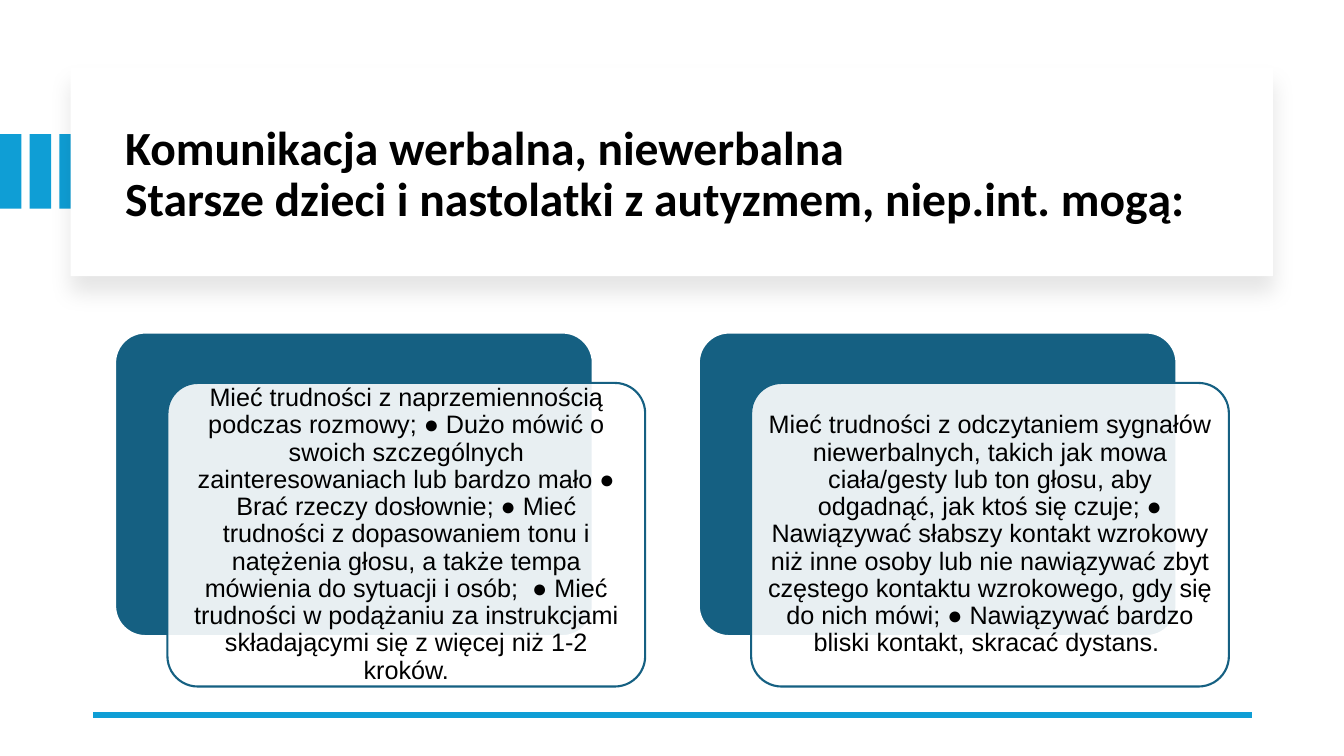
from dataclasses import dataclass

from lxml import etree
from pptx import Presentation
from pptx import util as u
from pptx.dml.color import RGBColor
from pptx.enum import shapes, text
from pptx.oxml import ns

COLORS = {
    "accent": "0F9ED5",
    "panel": "156082",
    "paper": "FFFFFF",
    "ink": "000000",
}
TITLE_LINES = (
    "Komunikacja werbalna, niewerbalna",
    "Starsze dzieci i nastolatki z autyzmem, niep.int. mogą:",
)
PANEL_TOP, PANEL_W, PANEL_H = 8.38, 12.04, 7.65
FRONT_DX, FRONT_DY = 1.32, 1.27
TEXT_MARGIN = 0.23


@dataclass
class Box:
    """Position and size in centimetres."""
    left: float
    top: float
    width: float
    height: float

    def emu(self) -> tuple:
        return tuple(u.Cm(v) for v in (self.left, self.top, self.width, self.height))

    def shifted(self, dx: float, dy: float) -> "Box":
        return Box(self.left + dx, self.top + dy, self.width, self.height)

    def inset(self, d: float) -> "Box":
        return Box(self.left + d, self.top + d, self.width - 2 * d, self.height - 2 * d)


@dataclass
class Panel:
    left: float
    words: str


PANELS = (
    Panel(2.9, "Mieć trudności z naprzemiennością podczas rozmowy; ● Dużo mówić o "
               "swoich szczególnych zainteresowaniach lub bardzo mało ● Brać rzeczy "
               "dosłownie; ● Mieć trudności z dopasowaniem tonu i natężenia głosu, a "
               "także tempa mówienia do sytuacji i osób;  ● Mieć trudności w podążaniu "
               "za instrukcjami składającymi się z więcej niż 1-2 kroków."),
    Panel(17.61, "Mieć trudności z odczytaniem sygnałów niewerbalnych, takich jak mowa "
                 "ciała/gesty lub ton głosu, aby odgadnąć, jak ktoś się czuje; ● "
                 "Nawiązywać słabszy kontakt wzrokowy niż inne osoby lub nie nawiązywać "
                 "zbyt częstego kontaktu wzrokowego, gdy się do nich mówi; ● Nawiązywać "
                 "bardzo bliski kontakt, skracać dystans. "),
)


def rgb(name: str) -> RGBColor:
    return RGBColor.from_string(COLORS[name])


def add_block(s, box: Box, fill: str, line: str = "", rounded: bool = False):
    kind = shapes.MSO_SHAPE.ROUNDED_RECTANGLE if rounded else shapes.MSO_SHAPE.RECTANGLE
    sp = s.shapes.add_shape(kind, *box.emu())
    sp.shadow.inherit = False
    sp.fill.solid()
    sp.fill.fore_color.rgb = rgb(fill)
    if rounded:
        sp.adjustments[0] = 0.1
    if line:
        sp.line.color.rgb = rgb(line)
        sp.line.width = u.Pt(1.5)
    else:
        sp.line.fill.background()
    return sp


def set_alpha(color, percent: int) -> None:
    alpha = etree.SubElement(color, ns.qn("a:alpha"))
    alpha.set("val", str(percent * 1000))


def add_drop_shadow(sp) -> None:
    effects = sp.element.spPr.find(ns.qn("a:effectLst"))
    shadow = etree.SubElement(
        effects, ns.qn("a:outerShdw"), blurRad=str(u.Pt(15)), dist=str(u.Pt(11)),
        dir="5400000", algn="t", rotWithShape="0")
    color = etree.SubElement(shadow, ns.qn("a:srgbClr"), val=COLORS["ink"])
    set_alpha(color, 10)


def add_run(p, words: str, font: str, size: float, bold: bool = False) -> None:
    r = p.add_run()
    r.text = words
    r.font.name = font
    r.font.size = u.Pt(size)
    r.font.bold = bold
    r.font.color.rgb = rgb("ink")


def prepare_frame(tf, align):
    """Wrap and centre the frame vertically; return its first paragraph."""
    tf.word_wrap = True
    tf.auto_size = text.MSO_AUTO_SIZE.NONE
    tf.vertical_anchor = text.MSO_ANCHOR.MIDDLE
    p = tf.paragraphs[0]
    p.alignment = align
    p.line_spacing = 0.9
    return p


def add_header(s) -> None:
    for i in range(3):
        add_block(s, Box(i * 0.75, 3.38, 0.54, 1.88), "accent")
    card = add_block(s, Box(1.78, 1.7, 30.3, 5.26), "paper")
    add_drop_shadow(card)

    title = s.shapes.title
    card.element.addnext(title.element)
    title.left, title.top, title.width, title.height = Box(2.9, 2.26, 28.24, 4.32).emu()
    p = prepare_frame(title.text_frame, text.PP_ALIGN.LEFT)
    for i, words in enumerate(TITLE_LINES):
        if i:
            p.add_line_break()
        add_run(p, words, "Calibri", 34, bold=True)


def add_rule(s) -> None:
    rule = s.shapes.add_connector(
        shapes.MSO_CONNECTOR.STRAIGHT, u.Cm(31.55), u.Cm(18.01), u.Cm(2.34), u.Cm(18.01))
    rule.line.color.rgb = rgb("accent")
    rule.line.width = u.Pt(4.5)
    etree.SubElement(rule.element.spPr, ns.qn("a:effectLst"))


def add_panel(s, panel: Panel) -> None:
    back = Box(panel.left, PANEL_TOP, PANEL_W, PANEL_H)
    front = back.shifted(FRONT_DX, FRONT_DY)
    add_block(s, back, "panel", "paper", rounded=True)
    sheet = add_block(s, front, "paper", "panel", rounded=True)
    set_alpha(sheet.element.spPr.find(ns.qn("a:solidFill"))[0], 90)

    tf = s.shapes.add_textbox(*front.inset(TEXT_MARGIN).emu()).text_frame
    tf.margin_left = tf.margin_right = tf.margin_top = tf.margin_bottom = u.Cm(0.19)
    p = prepare_frame(tf, text.PP_ALIGN.CENTER)
    add_run(p, panel.words, "Arial", 18)


def main() -> None:
    prs = Presentation()
    prs.slide_width, prs.slide_height = u.Cm(33.87), u.Cm(19.05)
    s = prs.slides.add_slide(prs.slide_layouts[5])
    s.background.fill.solid()
    s.background.fill.fore_color.rgb = rgb("paper")
    add_header(s)
    add_rule(s)
    for panel in PANELS:
        add_panel(s, panel)
    prs.save("out.pptx")


if __name__ == "__main__":
    main()
